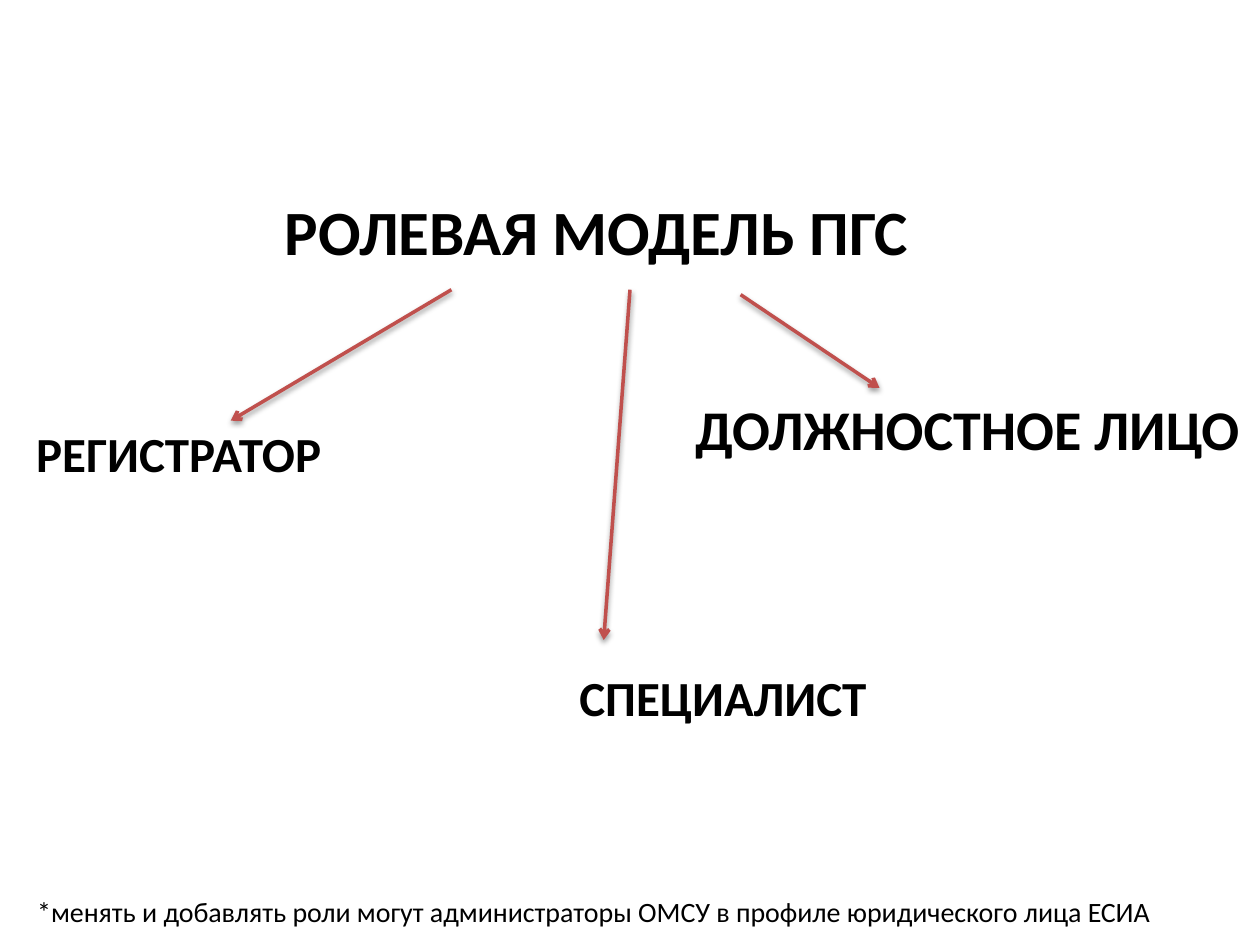
from lxml.etree import SubElement
from pptx import Presentation
from pptx.dml.color import RGBColor
from pptx.enum.shapes import MSO_CONNECTOR
from pptx.enum.text import MSO_AUTO_SIZE, PP_ALIGN
from pptx.oxml.ns import qn
from pptx.util import Cm, Pt

COLORS = {"text": "000000", "arrow": "C0504D", "shadow": "000000"}


class RoleSlide:
    font_name = "Calibri"
    line_width = Pt(2)

    def __init__(self, presentation):
        self.slide = presentation.slides.add_slide(presentation.slide_layouts[6])

    def add_text(self, text, left, top, width, height, size,
                 bold=True, align=PP_ALIGN.LEFT, wrap=True):
        box = self.slide.shapes.add_textbox(Cm(left), Cm(top), Cm(width), Cm(height))
        text_frame = box.text_frame
        text_frame.word_wrap = wrap
        text_frame.auto_size = MSO_AUTO_SIZE.SHAPE_TO_FIT_TEXT
        text_frame.text = text
        paragraph = text_frame.paragraphs[0]
        paragraph.alignment = align
        font = paragraph.runs[0].font
        font.name = self.font_name
        font.size = Pt(size)
        font.bold = bold
        font.color.rgb = RGBColor.from_string(COLORS["text"])

    def add_arrow(self, start, end):
        points = [Cm(value) for value in (*start, *end)]
        connector = self.slide.shapes.add_connector(MSO_CONNECTOR.STRAIGHT, *points)
        connector.line.width = self.line_width
        connector.line.color.rgb = RGBColor.from_string(COLORS["arrow"])
        properties = connector._element.spPr
        SubElement(properties.find(qn("a:ln")), qn("a:tailEnd"), type="arrow")
        # Soft shadow falling straight down
        effects = SubElement(properties, qn("a:effectLst"))
        shadow = SubElement(effects, qn("a:outerShdw"), blurRad="40000",
                            dist="20000", dir="5400000", rotWithShape="0")
        color = SubElement(shadow, qn("a:srgbClr"), val=COLORS["shadow"])
        SubElement(color, qn("a:alpha"), val="38000")


def main():
    presentation = Presentation()
    presentation.slide_width = Cm(25.4)
    presentation.slide_height = Cm(19.05)
    slide = RoleSlide(presentation)

    # Title
    slide.add_text("РОЛЕВАЯ МОДЕЛЬ ПГС ", 1.27, 3.76, 21.8, 1.8, 36,
                   align=PP_ALIGN.CENTER)

    # Roles
    slide.add_text("РЕГИСТРАТОР", 0.48, 8.41, 14.4, 1.45, 28)
    slide.add_text("СПЕЦИАЛИСТ", 11.43, 13.34, 6.78, 1.45, 28)
    slide.add_text("ДОЛЖНОСТНОЕ ЛИЦО", 13.77, 7.82, 11.58, 1.63, 32, wrap=False)

    # Arrows from the title to each role
    for start, end in [
        ((9.1, 5.84), (4.65, 8.48)),
        ((12.7, 5.84), (12.17, 12.9)),
        ((14.93, 5.94), (17.73, 7.82)),
    ]:
        slide.add_arrow(start, end)

    # Footnote
    slide.add_text("*менять и добавлять роли могут администраторы ОМСУ "
                   "в профиле юридического лица ЕСИА",
                   0.5, 17.9, 24.28, 0.94, 16, bold=False)

    presentation.save("out.pptx")


if __name__ == "__main__":
    main()
